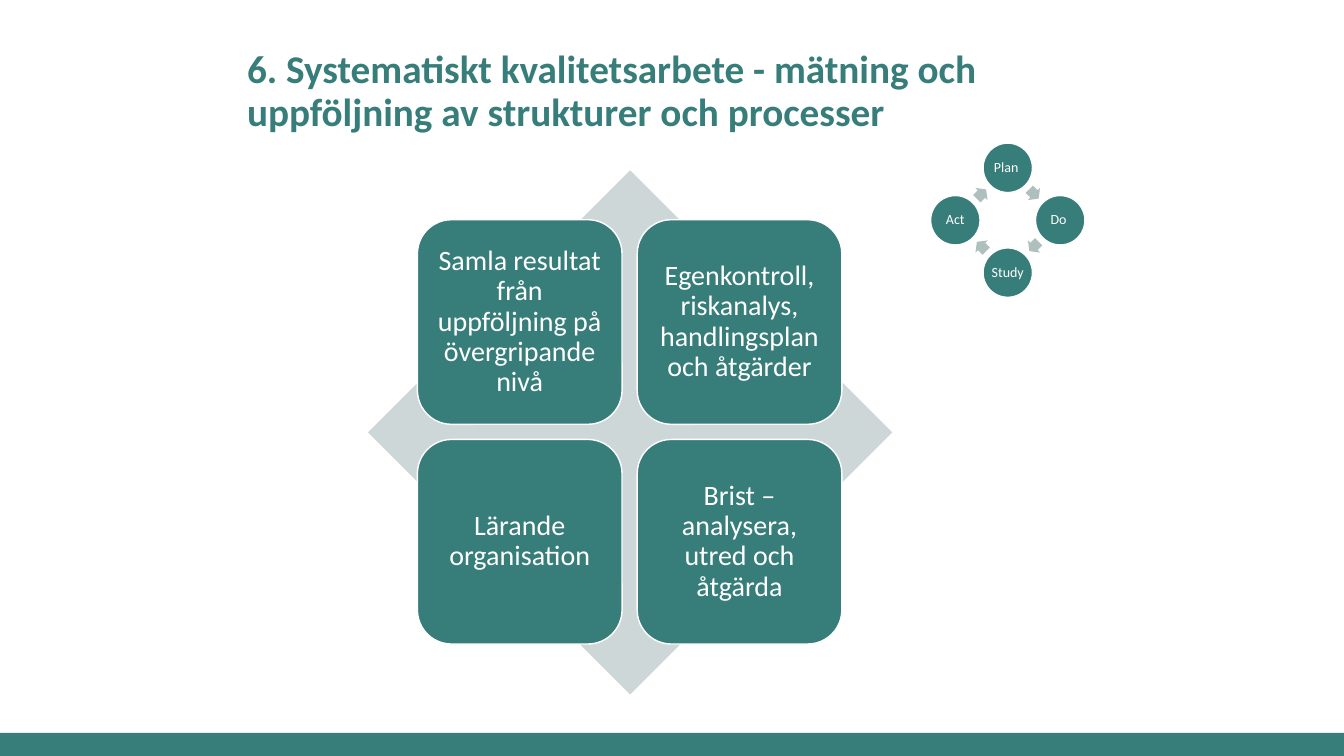
"""Build the slide on systematic quality work with a four-box matrix and a PDSA cycle."""
import pptx
import pptx.dml.color
import pptx.enum.shapes
import pptx.enum.text
import pptx.util

TEAL = pptx.dml.color.RGBColor(0x37, 0x7D, 0x7A)
ARROW_GREY = pptx.dml.color.RGBColor(0xAE, 0xBF, 0xBE)
DIAMOND_GREY = pptx.dml.color.RGBColor(0xCE, 0xD7, 0xD7)
WHITE = pptx.dml.color.RGBColor(0xFF, 0xFF, 0xFF)
PX = 9144
SHAPES = pptx.enum.shapes.MSO_SHAPE
ALIGN = pptx.enum.text.PP_ALIGN

presentation = pptx.Presentation()
presentation.slide_width = pptx.util.Emu(1333 * PX)
presentation.slide_height = pptx.util.Emu(750 * PX)
slide = presentation.slides.add_slide(presentation.slide_layouts[5])


def add_filled(kind, left, top, width, height, color):
    """Add a borderless preset shape without shadow."""
    shape = slide.shapes.add_shape(kind, left * PX, top * PX, width * PX, height * PX)
    shape.shadow.inherit = False
    shape.fill.solid()
    shape.fill.fore_color.rgb = color
    shape.line.fill.background()
    return shape


def write(shape, text, size, color, bold, alignment):
    """Write one vertically centred paragraph into a shape."""
    frame = shape.text_frame
    frame.text = text
    frame.word_wrap = True
    frame.vertical_anchor = pptx.enum.text.MSO_ANCHOR.MIDDLE
    paragraph = frame.paragraphs[0]
    paragraph.alignment = alignment
    paragraph.line_spacing = 0.9
    paragraph.font.name = "Calibri"
    paragraph.font.size = pptx.util.Pt(size)
    paragraph.font.bold = bold
    paragraph.font.color.rgb = color


add_filled(SHAPES.RECTANGLE, 0, 727, 1333, 23, TEAL)

title = slide.shapes.title
title.left, title.top, title.width, title.height = 235 * PX, 35 * PX, 772 * PX, 113 * PX
write(title, "6. Systematiskt kvalitetsarbete - mätning och uppföljning av strukturer och processer",
      28, TEAL, True, ALIGN.LEFT)
title.text_frame.auto_size = pptx.enum.text.MSO_AUTO_SIZE.NONE

add_filled(SHAPES.DIAMOND, 365, 169, 520, 520, DIAMOND_GREY)

nodes = []
cycle_steps = [("Plan ", 0, -1), ("Do ", 1, 0), ("Study ", 0, 1), ("Act", -1, 0)]
for index, (label, across, down) in enumerate(cycle_steps):
    nodes.append((SHAPES.OVAL, 975 + 52 * across, 194 + 52 * down, 49, label, 10, 1))
    next_across, next_down = cycle_steps[(index + 1) % len(cycle_steps)][1:]
    arrow = add_filled(SHAPES.RIGHT_ARROW, 993 + 26 * (across + next_across),
                       210 + 26 * (down + next_down), 13, 17, ARROW_GREY)
    arrow.adjustments[0] = 0.6
    arrow.adjustments[1] = 0.5
    arrow.rotation = 45 + 90 * index

matrix_labels = [
    "Samla resultat från uppföljning på övergripande nivå",
    "Egenkontroll, riskanalys, handlingsplan och åtgärder",
    "Lärande organisation",
    "Brist – analysera, utred och åtgärda",
]
for index, label in enumerate(matrix_labels):
    row, column = divmod(index, 2)
    nodes.append((SHAPES.ROUNDED_RECTANGLE, 414 + 218 * column, 218 + 218 * row, 203, label, 20, 8))

for kind, left, top, side, label, size, margin in nodes:
    node = add_filled(kind, left, top, side, side, TEAL)
    node.line.color.rgb = WHITE
    node.line.width = pptx.util.Pt(1)
    write(node, label, size, WHITE, False, ALIGN.CENTER)
    frame = node.text_frame
    frame.margin_left = frame.margin_right = margin * PX
    frame.margin_top = frame.margin_bottom = margin * PX

presentation.save("out.pptx")
